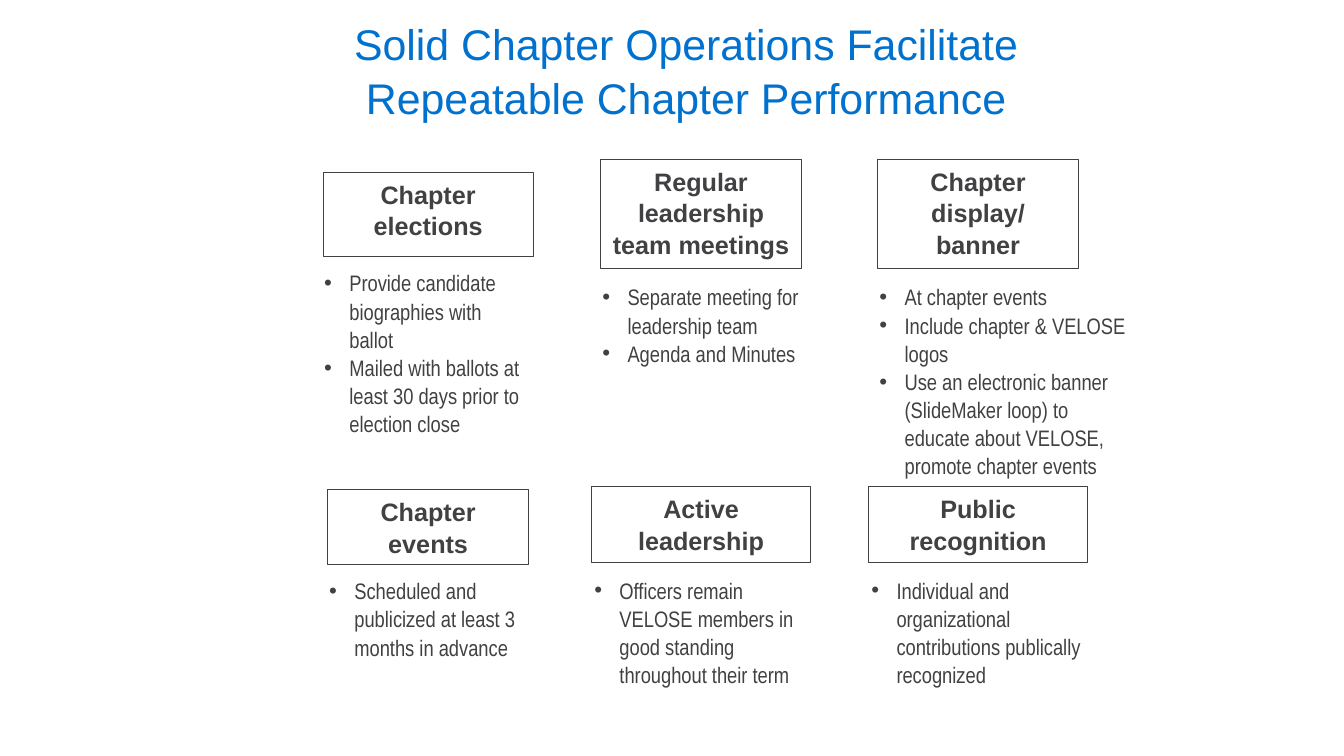
"""Build the slide on solid chapter operations."""
from dataclasses import dataclass

import pptx
import pptx.dml.color
import pptx.enum.shapes
import pptx.enum.text
import pptx.oxml
import pptx.oxml.ns
import pptx.util

Pt = pptx.util.Pt
COLORS = {"title": "0071CE", "text": "414042"}
TITLE_FONT = {"name": "Arial", "size": Pt(30.6), "bold": False}
HEADING_FONT = {"name": "Arial", "size": Pt(18), "bold": True}
POINT_FONT = {"name": "Arial Narrow", "size": Pt(16), "bold": False}
LINE_SPACING = 1.05
INDENT = Pt(18)


@dataclass(frozen=True)
class Box:
    left: float
    top: float
    width: float
    height: float

    def lengths(self) -> tuple:
        return tuple(Pt(v) for v in (self.left, self.top, self.width, self.height))


@dataclass(frozen=True)
class Practice:
    heading: str
    heading_box: Box
    points: tuple[str, ...]
    points_box: Box


PRACTICES = (
    Practice("Chapter elections", Box(231, 123.1, 150, 60),
             ("Provide candidate biographies with ballot",
              "Mailed with ballots at least 30 days prior to election close"),
             Box(224.6, 188, 156, 123.8)),
    Practice("Regular leadership team meetings", Box(429, 114, 144, 78),
             ("Separate meeting for leadership team", "Agenda and Minutes"),
             Box(423.4, 198, 156, 65.5)),
    Practice("Chapter display/ banner", Box(627, 114, 144, 78),
             ("At chapter events",
              "Include chapter & VELOSE logos",
              "Use an electronic banner (SlideMaker loop) to educate about VELOSE, "
              "promote chapter events"),
             Box(621.4, 198, 195, 143.3)),
    Practice("Chapter events", Box(234, 349.9, 144, 53.3),
             ("Scheduled and publicized at least 3 months in advance",),
             Box(228.2, 408, 156, 64.8)),
    Practice("Active leadership", Box(423, 347.8, 156, 54),
             ("Officers remain VELOSE members in good standing throughout their term",),
             Box(417.6, 407.5, 168, 84.2)),
    Practice("Public recognition", Box(621, 347.8, 156, 54),
             ("Individual and organizational contributions publically recognized",),
             Box(615.6, 407.5, 168, 84.2)),
)


def color(key: str) -> pptx.dml.color.RGBColor:
    return pptx.dml.color.RGBColor.from_string(COLORS[key])


def format_paragraph(paragraph, font: dict, color_key: str, centered: bool) -> None:
    align = pptx.enum.text.PP_ALIGN
    paragraph.alignment = align.CENTER if centered else align.LEFT
    paragraph.line_spacing = LINE_SPACING
    for attribute, value in font.items():
        setattr(paragraph.font, attribute, value)
    paragraph.font.color.rgb = color(color_key)


def add_bullet(paragraph) -> None:
    properties = paragraph._p.get_or_add_pPr()
    properties.set("marL", str(INDENT))
    properties.set("indent", str(-INDENT))
    namespaces = pptx.oxml.ns.nsdecls("a")
    for element in ('<a:buFont %s typeface="Arial"/>', '<a:buChar %s char="•"/>'):
        properties.append(pptx.oxml.parse_xml(element % namespaces))


def add_title(slide, text: str, box: Box) -> None:
    title = slide.shapes.title
    title.left, title.top, title.width, title.height = box.lengths()
    frame = title.text_frame
    frame.text = text
    settings = {
        "auto_size": pptx.enum.text.MSO_AUTO_SIZE.NONE,
        "vertical_anchor": pptx.enum.text.MSO_ANCHOR.BOTTOM,
        "word_wrap": True,
        "margin_left": Pt(9.4), "margin_right": Pt(9.4),
        "margin_top": Pt(5), "margin_bottom": Pt(5),
    }
    for attribute, value in settings.items():
        setattr(frame, attribute, value)
    format_paragraph(frame.paragraphs[0], TITLE_FONT, "title", True)


def add_heading(slide, practice: Practice) -> None:
    heading = slide.shapes.add_shape(
        pptx.enum.shapes.MSO_SHAPE.RECTANGLE, *practice.heading_box.lengths())
    heading.shadow.inherit = False
    heading.fill.background()
    heading.line.color.rgb = color("text")
    heading.line.width = Pt(0.75)
    frame = heading.text_frame
    frame.word_wrap = True
    frame.vertical_anchor = pptx.enum.text.MSO_ANCHOR.TOP
    frame.text = practice.heading
    format_paragraph(frame.paragraphs[0], HEADING_FONT, "text", True)


def add_points(slide, practice: Practice) -> None:
    frame = slide.shapes.add_textbox(*practice.points_box.lengths()).text_frame
    frame.word_wrap = True
    frame.text = "\n".join(practice.points)
    for paragraph in frame.paragraphs:
        add_bullet(paragraph)
        format_paragraph(paragraph, POINT_FONT, "text", False)


def main() -> None:
    deck = pptx.Presentation()
    deck.slide_width, deck.slide_height = Pt(960.48), Pt(540)
    slide = deck.slides.add_slide(deck.slide_layouts.get_by_name("Title Only"))
    add_title(slide, "Solid Chapter Operations Facilitate Repeatable Chapter Performance",
              Box(234, 44.6, 512.6, 48.2))
    for practice in PRACTICES:
        add_heading(slide, practice)
        add_points(slide, practice)
    deck.save("out.pptx")


if __name__ == "__main__":
    main()
